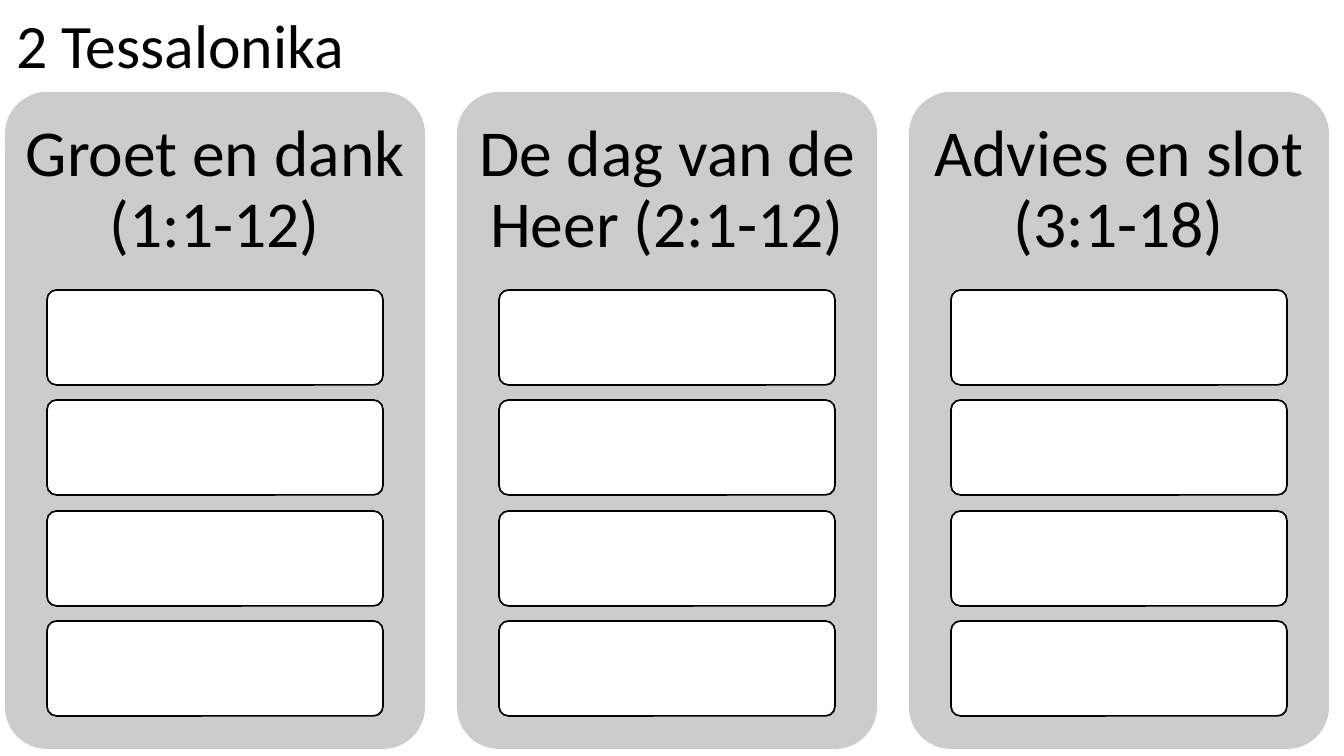
from pptx import Presentation
from pptx import util as u
from pptx.dml.color import RGBColor
from pptx.enum import shapes, text

PX = 914400 / 121
COLORS = {"panel": "CCCCCC", "card": "FFFFFF", "ink": "000000"}
HEADINGS = ["Groet en dank (1:1-12)", "De dag van de Heer (2:1-12)", "Advies en slot (3:1-18)"]
CARDS_PER_PANEL = 4


def add_rounded(left, top, width, height, color):
    box = page.shapes.add_shape(
        shapes.MSO_SHAPE.ROUNDED_RECTANGLE, *[round(v * PX) for v in (left, top, width, height)])
    box.adjustments[0] = 0.1
    box.shadow.inherit = False
    box.fill.solid()
    box.fill.fore_color.rgb = RGBColor.from_string(COLORS[color])
    return box


def set_text(box, wording, size, align, inset_x, inset_y):
    frame = box.text_frame
    frame.word_wrap = True
    frame.auto_size = text.MSO_AUTO_SIZE.NONE
    frame.vertical_anchor = text.MSO_ANCHOR.MIDDLE
    frame.margin_left = frame.margin_right = round(inset_x * PX)
    frame.margin_top = frame.margin_bottom = round(inset_y * PX)
    para = frame.paragraphs[0]
    para.text = wording
    para.alignment = align
    para.line_spacing = 0.9
    para.font.name = "Calibri"
    para.font.size = u.Pt(size)
    para.font.color.rgb = RGBColor.from_string(COLORS["ink"])


deck = Presentation()
deck.slide_width, deck.slide_height = round(1344 * PX), round(756 * PX)
page = deck.slides.add_slide(deck.slide_layouts.get_by_name("Title Only"))

title = page.shapes.title
title.left, title.top, title.width, title.height = [round(v * PX) for v in (4, 6, 1159, 86)]
set_text(title, "2 Tessalonika", 36.7, text.PP_ALIGN.LEFT, 12, 6)

for column, wording in enumerate(HEADINGS):
    left = 5 + column * 452
    panel = add_rounded(left, 92, 420, 657, "panel")
    panel.line.fill.background()

    heading = page.shapes.add_textbox(*[round(v * PX) for v in (left, 92, 420, 197)])
    set_text(heading, wording, 39, text.PP_ALIGN.CENTER, 19, 19)

    for row in range(CARDS_PER_PANEL):
        card = add_rounded(left + 42, 290 + row * 221 // 2, 336, 95, "card")
        card.line.color.rgb = RGBColor.from_string(COLORS["ink"])
        card.line.width = u.Pt(1)

deck.save("out.pptx")
